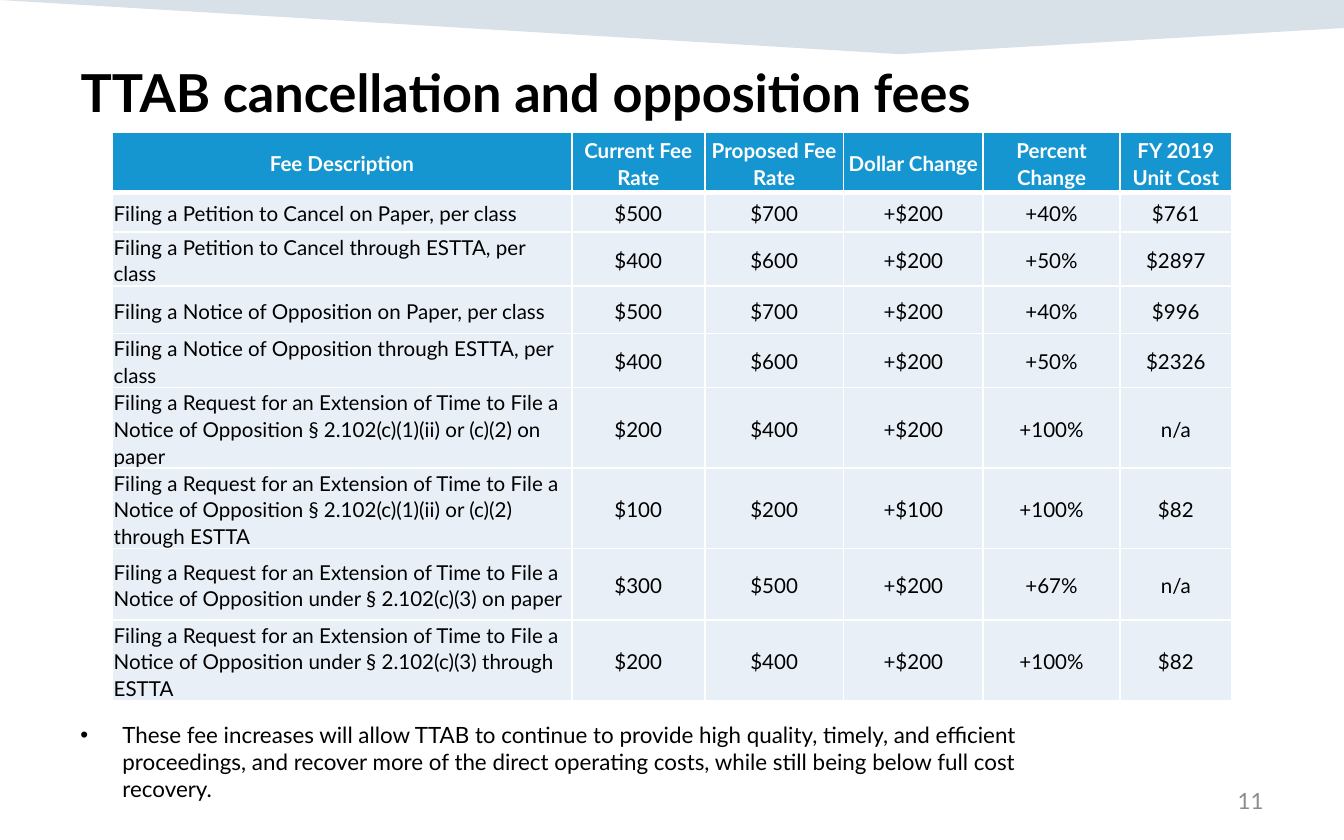
"""Build the slide of TTAB cancellation and opposition fees."""
from dataclasses import dataclass

from lxml.etree import SubElement
from pptx import Presentation
from pptx.dml.color import RGBColor as Color
from pptx.enum.text import MSO_ANCHOR as Anchor, MSO_AUTO_SIZE as AutoSize, PP_ALIGN as Align
from pptx.oxml import parse_xml
from pptx.oxml.ns import nsdecls, qn
from pptx.util import Pt

TITLE = "TTAB cancellation and opposition fees"
HEADERS = ("Fee Description", "Current Fee Rate", "Proposed Fee Rate",
           "Dollar Change", "Percent Change", "FY 2019 Unit Cost")
EXTENSION = "Filing a Request for an Extension of Time to File a Notice of Opposition "
FEES = [
    ("Filing a Petition to Cancel on Paper, per class", "$500", "$700", "+$200", "+40%", "$761"),
    ("Filing a Petition to Cancel through ESTTA, per class", "$400", "$600", "+$200", "+50%", "$2897"),
    ("Filing a Notice of Opposition on Paper, per class", "$500", "$700", "+$200", "+40%", "$996"),
    ("Filing a Notice of Opposition through ESTTA, per class", "$400", "$600", "+$200", "+50%", "$2326"),
    (EXTENSION + "§ 2.102(c)(1)(ii) or (c)(2) on paper", "$200", "$400", "+$200", "+100%", "n/a"),
    (EXTENSION + "§ 2.102(c)(1)(ii) or (c)(2) through ESTTA", "$100", "$200", "+$100", "+100%", "$82"),
    (EXTENSION + "under § 2.102(c)(3) on paper", "$300", "$500", "+$200", "+67%", "n/a"),
    (EXTENSION + "under § 2.102(c)(3) through ESTTA", "$200", "$400", "+$200", "+100%", "$82"),
]
NOTE = ("These fee increases will allow TTAB to continue to provide high quality, timely, and "
        "efficient proceedings, and recover more of the direct operating costs, while still "
        "being below full cost recovery.")
PAGE_NUMBER = "11"

SLIDE_SIZE = (720, 450)
BANNER_POINTS = [(0, 0), (720, 0), (720, 15.2), (481.7, 29.4)]
TITLE_BOX = (36, 28.8, 648, 69.8)
NOTE_BOX = (36, 383, 545.8, 72.7)
NUMBER_BOX = (516, 417, 168, 24)
TABLE_ORIGIN = (60.2, 70.9)
COLUMN_WIDTHS = (246.1, 71.3, 74.3, 74.9, 73.2, 60)
ROW_HEIGHTS = (32.2, 21.2, 29, 25.4, 29, 42.8, 42.8, 38.4, 42.8)


@dataclass(frozen=True)
class Theme:
    font: str = "Lato"
    text: str = "000000"
    light: str = "FFFFFF"
    muted: str = "8C8C8C"
    banner: str = "003865"
    header: str = "1596D1"
    body: str = "E8EFF7"
    title_size: int = 28
    text_size: int = 12
    table_size: int = 11


THEME = Theme()


def points(values):
    return [Pt(value) for value in values]


def style(paragraph, size, color, bold=False, align=Align.LEFT):
    paragraph.alignment = align
    for run in paragraph.runs:
        run.font.name = THEME.font
        run.font.size = Pt(size)
        run.font.bold = bold
        run.font.color.rgb = Color.from_string(color)


def add_banner(slide):
    builder = slide.shapes.build_freeform(0, 0, scale=Pt(1))
    builder.add_line_segments(BANNER_POINTS[1:], close=True)
    banner = builder.convert_to_shape()
    banner.shadow.inherit = False
    banner.line.fill.background()
    banner.fill.solid()
    banner.fill.fore_color.rgb = Color.from_string(THEME.banner)
    color = banner.fill._xPr.find(f".//{qn('a:srgbClr')}")
    SubElement(color, qn("a:alpha"), val="15000")
    slide.shapes._spTree.insert(2, banner._element)


def add_title(slide):
    title = slide.shapes.title
    title.left, title.top, title.width, title.height = points(TITLE_BOX)
    frame = title.text_frame
    frame.text = TITLE
    frame.auto_size = AutoSize.NONE
    frame.vertical_anchor = Anchor.TOP
    style(frame.paragraphs[0], THEME.title_size, THEME.text, bold=True)


def add_text(slide, box, text, color, anchor=Anchor.TOP, align=Align.LEFT):
    frame = slide.shapes.add_textbox(*points(box)).text_frame
    frame.word_wrap = True
    frame.vertical_anchor = anchor
    frame.text = text
    style(frame.paragraphs[0], THEME.text_size, color, align=align)
    return frame.paragraphs[0]


def add_bullet(paragraph, indent):
    properties = paragraph._p.get_or_add_pPr()
    properties.set("marL", str(Pt(indent)))
    properties.set("indent", str(-Pt(indent)))
    SubElement(properties, qn("a:buFont"), typeface="Arial")
    SubElement(properties, qn("a:buChar"), char="•")


def set_borders(cell, top, bottom):
    properties = cell._tc.get_or_add_tcPr()
    widths = {"lnL": 1, "lnR": 1, "lnT": top, "lnB": bottom}
    for position, (side, width) in enumerate(widths.items()):
        properties.insert(position, parse_xml(
            f'<a:{side} {nsdecls("a")} w="{Pt(width)}"><a:solidFill>'
            f'<a:srgbClr val="{THEME.light}"/></a:solidFill></a:{side}>'))


def fill_cell(cell, text, row, column):
    is_header = row == 0
    cell.text = text
    cell.vertical_anchor = Anchor.MIDDLE
    cell.margin_left = cell.margin_right = cell.margin_top = Pt(0.7)
    cell.margin_bottom = 0
    paragraph = cell.text_frame.paragraphs[0]
    paragraph.line_spacing = 1.07
    paragraph.space_after = Pt(8)
    align = Align.CENTER if is_header or column else Align.LEFT
    style(paragraph, THEME.table_size, THEME.light if is_header else THEME.text, is_header, align)
    cell.fill.solid()
    cell.fill.fore_color.rgb = Color.from_string(THEME.header if is_header else THEME.body)
    set_borders(cell, top=3 if row == 1 else 1, bottom=3 if is_header else 1)


def add_fee_table(slide):
    rows = [HEADERS, *FEES]
    size = (sum(COLUMN_WIDTHS), sum(ROW_HEIGHTS))
    table = slide.shapes.add_table(len(rows), len(HEADERS), *points(TABLE_ORIGIN + size)).table
    table.horz_banding = False
    for column, width in zip(table.columns, COLUMN_WIDTHS):
        column.width = Pt(width)
    for table_row, height in zip(table.rows, ROW_HEIGHTS):
        table_row.height = Pt(height)
    for row, texts in enumerate(rows):
        for column, text in enumerate(texts):
            fill_cell(table.cell(row, column), text, row, column)


def main():
    presentation = Presentation()
    presentation.slide_width, presentation.slide_height = points(SLIDE_SIZE)
    slide = presentation.slides.add_slide(presentation.slide_layouts[5])
    add_banner(slide)
    add_title(slide)
    add_bullet(add_text(slide, NOTE_BOX, NOTE, THEME.text), indent=22.5)
    add_fee_table(slide)
    add_text(slide, NUMBER_BOX, PAGE_NUMBER, THEME.muted, Anchor.MIDDLE, Align.RIGHT)
    presentation.save("out.pptx")


if __name__ == "__main__":
    main()
